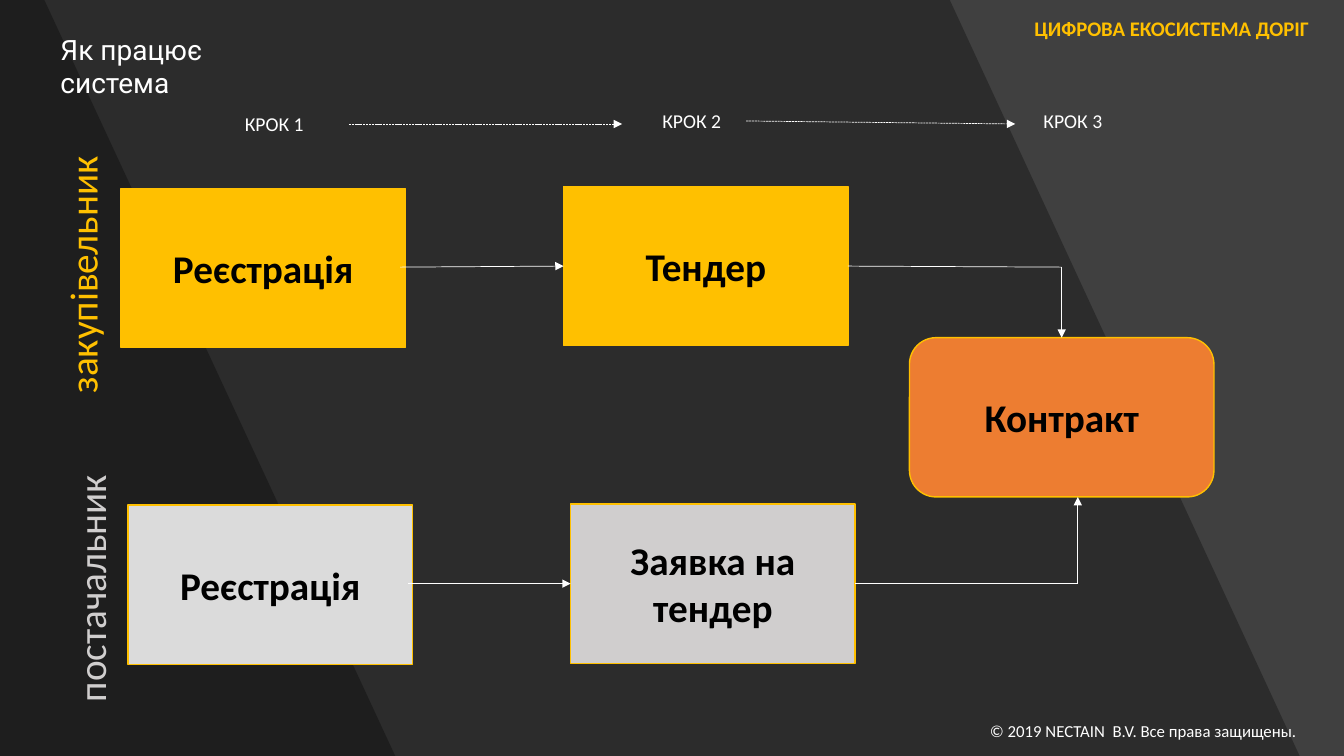
from pptx import Presentation
from pptx.dml.color import RGBColor
from pptx.enum.dml import MSO_LINE
from pptx.enum.shapes import MSO_CONNECTOR, MSO_SHAPE
from pptx.enum.text import MSO_ANCHOR, MSO_AUTO_SIZE, PP_ALIGN
from pptx.oxml.ns import qn
from pptx.util import Inches, Pt
from lxml.etree import SubElement

WHITE = RGBColor(0xFF, 0xFF, 0xFF)
BLACK = RGBColor(0, 0, 0)
GREY = RGBColor(0x40, 0x40, 0x40)
GOLD = RGBColor(0xFF, 0xC0, 0x00)
ORANGE = RGBColor(0xED, 0x7D, 0x31)
SILVER = RGBColor(0xDB, 0xDB, 0xDB)
ASH = RGBColor(0xD0, 0xCE, 0xCE)

BOX_W, BOX_H = 2.82, 1.58


def style(frame, text, size, color, bold=False, face="Calibri"):
    frame.text = text
    for run in frame.paragraphs[0].runs:
        font = run.font
        font.name, font.size, font.bold = face, Pt(size), bold
        font.color.rgb = color


def add_band(slide, top, foot):
    """Shade the slide from its left edge to a slanted right edge."""
    build = slide.shapes.build_freeform(0, 0)
    corners = [(top, 0), (foot, 7.5), (0, 7.5)]
    build.add_line_segments([(Inches(x), Inches(y)) for x, y in corners])
    band = build.convert_to_shape()
    band.shadow.inherit = False
    band.line.fill.background()
    band.fill.solid()
    band.fill.fore_color.rgb = BLACK
    tint = band.fill._xPr.find(qn("a:solidFill"))[0]
    SubElement(tint, qn("a:alpha"), val="30000")


def set_title(slide, text):
    title = slide.shapes.title
    title.element.getparent().append(title.element)
    title.left, title.top = Inches(0.5), Inches(0.27)
    title.width, title.height = Inches(2.7), Inches(0.44)
    frame = title.text_frame
    style(frame, text, 20, WHITE, face="Roboto")
    frame.word_wrap = True
    frame.auto_size = MSO_AUTO_SIZE.NONE
    frame.vertical_anchor = MSO_ANCHOR.TOP
    frame.paragraphs[0].alignment = PP_ALIGN.LEFT


def add_text(slide, text, x, y, w, h, size, color, bold=False, wrap=False):
    box = slide.shapes.add_textbox(Inches(x), Inches(y), Inches(w), Inches(h))
    style(box.text_frame, text, size, color, bold)
    box.text_frame.word_wrap = wrap
    return box


def add_box(slide, text, x, y, fill, w=BOX_W, kind=MSO_SHAPE.RECTANGLE):
    box = slide.shapes.add_shape(
        kind, Inches(x), Inches(y), Inches(w), Inches(BOX_H))
    box.shadow.inherit = False
    box.fill.solid()
    box.fill.fore_color.rgb = fill
    box.line.color.rgb = GOLD
    box.line.width = Pt(1)
    frame = box.text_frame
    style(frame, text, 28, BLACK, bold=True)
    frame.word_wrap = True
    frame.vertical_anchor = MSO_ANCHOR.MIDDLE
    frame.paragraphs[0].alignment = PP_ALIGN.CENTER
    return box


def add_line(slide, x1, y1, x2, y2, head=True, dash=False):
    line = slide.shapes.add_connector(
        MSO_CONNECTOR.STRAIGHT, Inches(x1), Inches(y1), Inches(x2), Inches(y2))
    line.line.color.rgb = WHITE
    line.line.width = Pt(0.5)
    if dash:
        line.line.dash_style = MSO_LINE.SQUARE_DOT
    if head:
        SubElement(line.line._get_or_add_ln(), qn("a:tailEnd"), type="triangle")
    SubElement(line.element.spPr, qn("a:effectLst"))
    return line


def add_steps(slide):
    for num, (x, y) in enumerate([(2.33, 1.06), (6.47, 1.03), (10.25, 1.03)], 1):
        add_text(slide, f"КРОК {num}", x, y, 0.79, 0.34, 14, WHITE)
    add_line(slide, 3.46, 1.23, 6.17, 1.23, dash=True)
    add_line(slide, 7.4, 1.2, 10.07, 1.23, dash=True)


def add_flow(slide):
    add_box(slide, "Реєстрація", 1.2, 1.87, GOLD)
    tender = add_box(slide, "Тендер", 5.59, 1.85, GOLD)
    add_box(slide, "Реєстрація", 1.27, 5.01, SILVER)
    bid = add_box(slide, "Заявка на тендер", 5.66, 5, ASH)
    deal = add_box(slide, "Контракт", 9.02, 3.35, ORANGE, 3.02,
                   MSO_SHAPE.ROUNDED_RECTANGLE)

    add_line(slide, 3.97, 2.65, 5.59, 2.64).end_connect(tender, 1)
    add_line(slide, 8.41, 2.64, 10.53, 2.65, head=False).begin_connect(tender, 3)
    add_line(slide, 10.53, 2.65, 10.53, 3.35).end_connect(deal, 0)

    add_line(slide, 4.05, 5.79, 5.66, 5.79).end_connect(bid, 1)
    add_line(slide, 8.48, 5.79, 10.69, 5.79, head=False).begin_connect(bid, 3)
    add_line(slide, 10.69, 5.79, 10.69, 4.93)


def add_roles(slide):
    buyer = add_text(slide, "закупівельник", -0.47, 2.43, 2.57, 0.57, 28, GOLD)
    seller = add_text(slide, "постачальник", -0.34, 5.54, 2.48, 0.57, 28, ASH)
    for role in (buyer, seller):
        role.rotation = 270


def main():
    deck = Presentation()
    deck.slide_width, deck.slide_height = Inches(13.33), Inches(7.5)
    slide = deck.slides.add_slide(deck.slide_layouts[5])
    slide.background.fill.solid()
    slide.background.fill.fore_color.rgb = GREY

    add_band(slide, 9.42, 12.89)
    add_band(slide, 0.44, 3.92)
    set_title(slide, "Як працює система")
    add_steps(slide)
    add_flow(slide)
    add_roles(slide)
    brand = add_text(slide, "ЦИФРОВА ЕКОСИСТЕМА ДОРІГ", 10.16, 0.16, 3.02, 0.31,
                     14.8, GOLD, bold=True, wrap=True)
    brand.text_frame.paragraphs[0].line_spacing = 0.8
    add_text(slide, "© 2019 NECTAIN  B.V. Все права защищены.",
             9.72, 7.1, 4.66, 0.3, 12, WHITE, wrap=True)
    deck.save("out.pptx")


if __name__ == "__main__":
    main()
